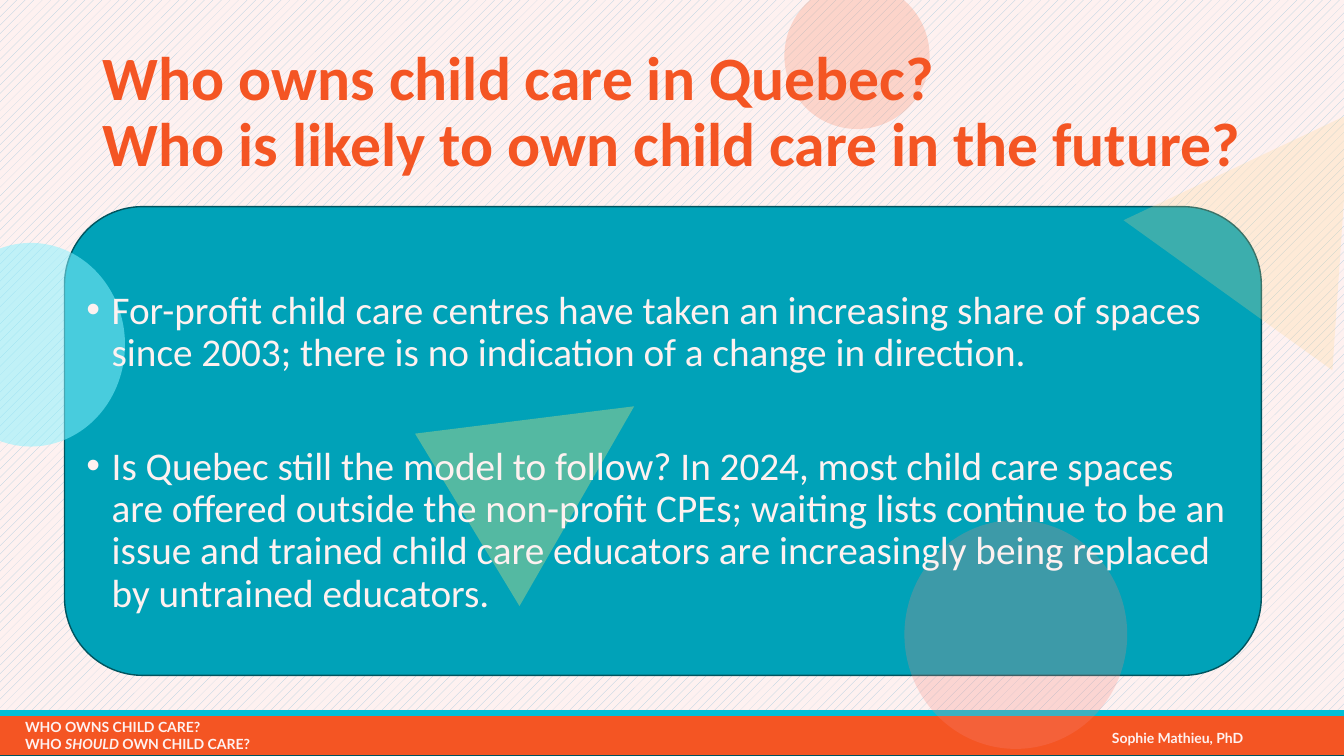
"""Build the slide on who owns child care in Quebec."""
from dataclasses import dataclass

from lxml.etree import SubElement
from pptx import Presentation
from pptx.dml.color import RGBColor as RGB
from pptx.enum.dml import MSO_PATTERN
from pptx.enum.shapes import MSO_SHAPE as SHAPE
from pptx.enum.text import MSO_ANCHOR, MSO_AUTO_SIZE as AUTO, PP_ALIGN
from pptx.oxml.ns import qn
from pptx.util import Inches, Pt


@dataclass(frozen=True)
class Theme:
    orange: str = "F45523"
    cyan: str = "00BFD7"
    teal: str = "00A2B8"
    dark: str = "00545E"
    pale: str = "FEF1F0"
    hatch: str = "AACBDE"
    coral: str = "F8997B"
    aqua: str = "89F2FF"
    rose: str = "F6857C"
    green: str = "A9D18E"
    sand: str = "FED78B"
    font: str = "Calibri"
    footer_font: str = "Lato"
    title_size: int = 44
    body_size: int = 28
    footer_size: int = 10


@dataclass(frozen=True)
class Box:
    left: float
    top: float
    width: float
    height: float

    def emu(self) -> list:
        return [Inches(v) for v in (self.left, self.top, self.width, self.height)]


@dataclass(frozen=True)
class Figure:
    kind: SHAPE
    box: Box
    fill: str
    line: str | None = None
    opacity: int = 100
    rotation: float = 0
    adjust: float | None = None


@dataclass(frozen=True)
class FooterText:
    box: Box
    runs: tuple[tuple[str, bool], ...]


T = Theme()
TITLE = "Who owns child care in Quebec?\vWho is likely to own child care in the future?"
TITLE_BOX = Box(0.92, 0.4, 11.5, 1.45)
BODY_BOX = Box(0.76, 2.83, 11.5, 4.19)
BULLETS = (
    "For-profit child care centres have taken an increasing share of spaces "
    "since 2003; there is no indication of a change in direction.",
    "Is Quebec still the model to follow? In 2024, most child care spaces are "
    "offered outside the non-profit CPEs; waiting lists continue to be an issue "
    "and trained child care educators are increasingly being replaced by "
    "untrained educators.",
)
BULLET_GAP = 51
FOOTER_BARS = (
    Figure(SHAPE.RECTANGLE, Box(-0.09, 7.1, 13.68, 0.4), T.orange, T.dark),
    Figure(SHAPE.RECTANGLE, Box(-0.09, 7.05, 13.68, 0.05), T.cyan, T.cyan),
)
FOOTER_TEXTS = (
    FooterText(Box(0.15, 7.08, 2.65, 0.44),
               (("WHO OWNS CHILD CARE?\vWHO ", False), ("SHOULD", True),
                (" OWN CHILD CARE?", False))),
    FooterText(Box(10.93, 7.19, 2.65, 0.27), (("Sophie Mathieu, PhD", False),)),
)
TITLE_CIRCLE = Figure(SHAPE.OVAL, Box(7.78, -0.17, 1.44, 1.45), T.coral, opacity=32)
PANEL_FIGURES = (
    Figure(SHAPE.ROUNDED_RECTANGLE, Box(0.64, 2.05, 11.87, 4.65), T.teal, T.dark),
    Figure(SHAPE.OVAL, Box(-0.63, 2.41, 1.87, 2.02), T.aqua, opacity=53),
    Figure(SHAPE.OVAL, Box(8.97, 5.16, 2.21, 2.27), T.rose, opacity=25),
    Figure(SHAPE.ISOSCELES_TRIANGLE, Box(4.49, 3.64, 2, 2), T.green,
           opacity=50, rotation=58.8, adjust=0.447),
)
CORNER_TRIANGLE = Figure(SHAPE.ISOSCELES_TRIANGLE, Box(11.5, 1.55, 2.48, 2.23),
                         T.sand, opacity=24, rotation=154.8)


def set_background(slide) -> None:
    fill = slide.background.fill
    fill.patterned()
    fill.pattern = MSO_PATTERN.PERCENT_20
    fill.fore_color.rgb = RGB.from_string(T.hatch)
    fill.back_color.rgb = RGB.from_string(T.pale)


def draw_figure(slide, fig: Figure) -> None:
    sp = slide.shapes.add_shape(fig.kind, *fig.box.emu())
    sp.shadow.inherit = False
    sp.rotation = fig.rotation
    if fig.adjust is not None:
        sp.adjustments[0] = fig.adjust
    sp.fill.solid()
    sp.fill.fore_color.rgb = RGB.from_string(fig.fill)
    if fig.opacity < 100:
        color = sp.element.spPr.find(qn("a:solidFill"))[0]
        SubElement(color, qn("a:alpha")).set("val", str(fig.opacity * 1000))
    if fig.line:
        sp.line.color.rgb = RGB.from_string(fig.line)
        sp.line.width = Pt(1)
    else:
        sp.line.fill.background()


def style_font(font, name: str, size: int, color: str, bold: bool = False) -> None:
    font.name, font.size, font.bold = name, Pt(size), bold
    font.color.rgb = RGB.from_string(color)


def draw_footer_text(slide, item: FooterText) -> None:
    tf = slide.shapes.add_textbox(*item.box.emu()).text_frame
    tf.word_wrap = True
    tf.auto_size = AUTO.SHAPE_TO_FIT_TEXT
    p = tf.paragraphs[0]
    for text, italic in item.runs:
        before = len(p.runs)
        if "\v" in text:
            p.text = text
        else:
            p.add_run().text = text
        for r in p.runs[before:]:
            style_font(r.font, T.footer_font, T.footer_size, T.pale, True)
            r.font.italic = italic


def draw_title(slide) -> None:
    sp = slide.shapes.title
    slide.shapes.element.append(sp.element)
    sp.left, sp.top, sp.width, sp.height = TITLE_BOX.emu()
    tf = sp.text_frame
    tf.text = TITLE
    tf.auto_size = AUTO.NONE
    tf.word_wrap = True
    tf.vertical_anchor = MSO_ANCHOR.MIDDLE
    p = tf.paragraphs[0]
    p.alignment = PP_ALIGN.LEFT
    p.line_spacing = 0.9
    for r in p.runs:
        style_font(r.font, T.font, T.title_size, T.orange, True)


def draw_bullets(slide) -> None:
    tf = slide.shapes.add_textbox(*BODY_BOX.emu()).text_frame
    tf.word_wrap = True
    tf.text = "\n".join(BULLETS)
    for i, p in enumerate(tf.paragraphs):
        p.line_spacing = 0.9
        p.space_before = Pt(BULLET_GAP if i else 0)
        pPr = p._p.get_or_add_pPr()
        pPr.set("marL", str(Inches(0.25)))
        pPr.set("indent", str(Inches(-0.25)))
        SubElement(pPr, qn("a:buFont")).set("typeface", "Arial")
        SubElement(pPr, qn("a:buChar")).set("char", "•")
        style_font(p.runs[0].font, T.font, T.body_size, T.pale)


def main() -> None:
    prs = Presentation()
    prs.slide_width, prs.slide_height = Inches(13.33), Inches(7.5)
    slide = prs.slides.add_slide(prs.slide_layouts[5])
    set_background(slide)
    for fig in FOOTER_BARS:
        draw_figure(slide, fig)
    for item in FOOTER_TEXTS:
        draw_footer_text(slide, item)
    draw_figure(slide, TITLE_CIRCLE)
    draw_title(slide)
    for fig in PANEL_FIGURES:
        draw_figure(slide, fig)
    draw_bullets(slide)
    draw_figure(slide, CORNER_TRIANGLE)
    prs.save("out.pptx")


if __name__ == "__main__":
    main()
